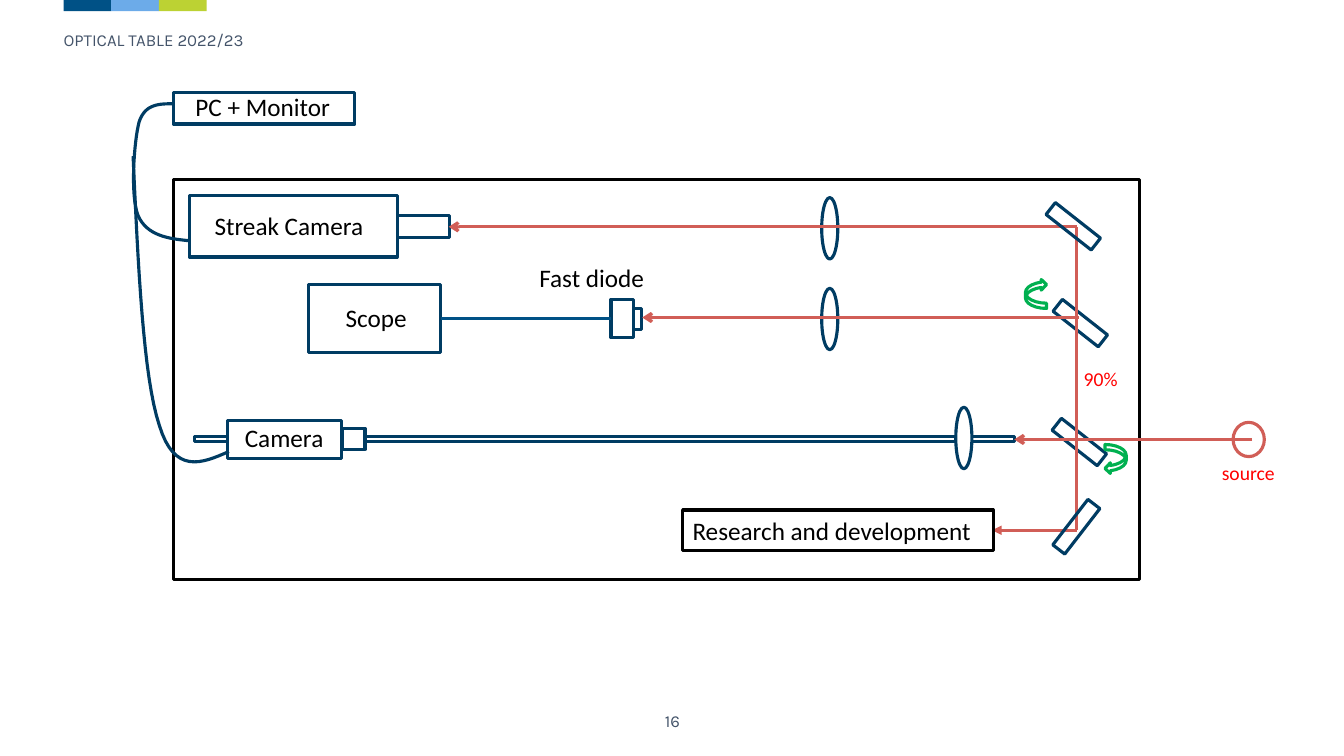
from dataclasses import dataclass

from lxml import etree
from pptx import Presentation
from pptx.dml.color import RGBColor
from pptx.enum import shapes, text
from pptx.oxml import ns
from pptx.util import Inches, Pt


@dataclass(frozen=True)
class Theme:
    navy: str = "003C63"
    blue: str = "005186"
    sky: str = "6CABE9"
    lime: str = "BCD233"
    slate: str = "44546A"
    beam: str = "D15E57"
    red: str = "FF0000"
    green: str = "00B050"
    black: str = "000000"
    white: str = "FFFFFF"
    body_font: str = "Calibri"
    heading_font: str = "Karla"
    label_size: int = 18
    note_size: int = 14
    heading_size: int = 12
    stroke: float = 2.25


THEME = Theme()
KIND = shapes.MSO_SHAPE


def color(value):
    return RGBColor.from_string(value)


def style_line(shape, line_color):
    shape.line.color.rgb = color(line_color)
    shape.line.width = Pt(THEME.stroke)


def write(shape, words, size, font_color, font=THEME.body_font, align=text.PP_ALIGN.LEFT):
    paragraph = shape.text_frame.paragraphs[0]
    paragraph.alignment = align
    run = paragraph.add_run()
    run.text = words
    run.font.name = font
    run.font.size = Pt(size)
    run.font.color.rgb = color(font_color)
    return paragraph


def add_outline(slide, kind, left, top, width, height, line=THEME.navy, fill=None, rotation=0):
    shape = slide.shapes.add_shape(kind, Inches(left), Inches(top), Inches(width), Inches(height))
    shape.shadow.inherit = False
    shape.rotation = rotation
    if fill:
        shape.fill.solid()
        shape.fill.fore_color.rgb = color(fill)
    else:
        shape.fill.background()
    if line:
        style_line(shape, line)
    else:
        shape.line.fill.background()
    return shape


def add_box(slide, *bounds, **style):
    return add_outline(slide, KIND.RECTANGLE, *bounds, **style)


def add_mirror(slide, left, top, rotation=308.2):
    add_box(slide, left, top, 0.15, 0.57, rotation=rotation)


def add_lens(slide, left, top, fill=None):
    add_outline(slide, KIND.OVAL, left, top, 0.16, 0.61, fill=fill)


def add_flip_arrow(slide, left, top, rotation=0):
    add_outline(slide, KIND.CURVED_LEFT_ARROW, left, top, 0.21, 0.29,
                line=THEME.green, rotation=rotation)


def add_line(slide, start, end, line=THEME.beam, head=None):
    connector = slide.shapes.add_connector(
        shapes.MSO_CONNECTOR.STRAIGHT, *(Inches(value) for value in (*start, *end)))
    style_line(connector, line)
    if head:
        outline = connector.line._get_or_add_ln()
        etree.SubElement(outline, ns.qn("a:tailEnd"), type=head)
    etree.SubElement(connector._element.spPr, ns.qn("a:effectLst"))


def curve_points(start, segments, steps=16):
    for first, second, end in segments:
        for step in range(1, steps + 1):
            t = step / steps
            weights = ((1 - t) ** 3, 3 * t * (1 - t) ** 2, 3 * t ** 2 * (1 - t), t ** 3)
            corners = (start, first, second, end)
            yield tuple(Inches(sum(w * corner[axis] for w, corner in zip(weights, corners)))
                        for axis in (0, 1))
        start = end


def add_cable(slide, start, segments):
    builder = slide.shapes.build_freeform(Inches(start[0]), Inches(start[1]))
    builder.add_line_segments(list(curve_points(start, segments)), close=False)
    cable = builder.convert_to_shape()
    cable.shadow.inherit = False
    cable.fill.background()
    style_line(cable, THEME.navy)


def add_label(slide, words, left, top, width, height=0.4,
              size=THEME.label_size, font_color=THEME.black):
    label = slide.shapes.add_textbox(Inches(left), Inches(top), Inches(width), Inches(height))
    label.text_frame.word_wrap = False
    write(label, words, size, font_color)


def add_heading(slide, words):
    title = slide.shapes.title
    title.left, title.top, title.width, title.height = map(Inches, (0.63, 0.32, 1.81, 0.42))
    frame = title.text_frame
    frame.margin_left = frame.margin_right = frame.margin_top = frame.margin_bottom = 0
    frame.vertical_anchor = text.MSO_ANCHOR.TOP
    frame.auto_size = text.MSO_AUTO_SIZE.NONE
    frame.word_wrap = True
    paragraph = write(title, words, THEME.heading_size, THEME.slate, THEME.heading_font)
    paragraph.line_spacing = 0.9


def add_page_furniture(slide):
    for index, fill in enumerate((THEME.blue, THEME.sky, THEME.lime)):
        add_box(slide, 0.63 + index * 0.473, 0, 0.473, 0.11, line=None, fill=fill)
    number = slide.shapes.add_textbox(Inches(6.21), Inches(6.95), Inches(0.92), Inches(0.4))
    number.text_frame.word_wrap = True
    number.text_frame.vertical_anchor = text.MSO_ANCHOR.MIDDLE
    write(number, "16", THEME.heading_size, THEME.slate, THEME.heading_font, text.PP_ALIGN.CENTER)


def add_instruments(slide):
    add_box(slide, 1.72, 1.78, 9.58, 3.97, line=THEME.black)
    add_box(slide, 1.88, 1.94, 2.06, 0.61)
    add_box(slide, 3.94, 2.14, 0.52, 0.22)
    add_box(slide, 6.06, 2.97, 0.22, 0.38)
    add_box(slide, 6.28, 3.06, 0.08, 0.21)
    add_box(slide, 1.93, 4.33, 8.13, 0.05)
    add_box(slide, 2.26, 4.17, 1.13, 0.38, fill=THEME.white)
    add_box(slide, 3.4, 4.25, 0.22, 0.21, fill=THEME.white)
    add_box(slide, 1.72, 0.92, 1.8, 0.31)
    add_box(slide, 3.06, 2.82, 1.31, 0.68)
    add_line(slide, (6.06, 3.16), (4.37, 3.16), line=THEME.blue)
    add_cable(slide, (1.89, 2.39), [
        ((1.67, 2.37), (1.46, 2.34), (1.37, 2.14)),
        ((1.29, 1.94), (1.33, 1.4), (1.38, 1.21)),
        ((1.44, 1.03), (1.58, 1.03), (1.72, 1.03))])
    add_cable(slide, (2.27, 4.48), [
        ((2, 4.6), (1.73, 4.71), (1.58, 4.22)),
        ((1.42, 3.74), (1.37, 2.64), (1.32, 1.55))])


def add_optics(slide):
    add_lens(slide, 8.15, 1.96)
    add_lens(slide, 8.15, 2.86)
    add_lens(slide, 9.48, 4.04, fill=THEME.white)
    add_mirror(slide, 10.63, 4.1)
    add_mirror(slide, 10.64, 2.92)
    add_line(slide, (12.42, 4.36), (10.06, 4.36), head="arrow")
    add_line(slide, (10.68, 5.26), (10.68, 2.25))
    add_line(slide, (10.7, 3.15), (6.37, 3.15), head="arrow")
    add_line(slide, (10.68, 2.25), (4.45, 2.25), head="arrow")
    add_line(slide, (10.68, 5.26), (9.84, 5.26), head="triangle")
    add_mirror(slide, 10.57, 1.96)
    add_mirror(slide, 10.6, 4.94, rotation=217.7)
    add_outline(slide, KIND.OVAL, 12.23, 4.19, 0.31, 0.34, line=THEME.beam)
    add_flip_arrow(slide, 10.96, 4.41)
    add_flip_arrow(slide, 10.17, 2.77, rotation=180)


def add_labels(slide):
    add_label(slide, "PC + Monitor", 1.84, 0.86, 1.55)
    add_label(slide, "Streak Camera", 2.03, 2.04, 1.69)
    add_label(slide, "Fast diode", 5.25, 2.55, 1.25)
    add_label(slide, "Camera", 2.33, 4.14, 0.99)
    add_label(slide, "Scope", 3.33, 2.95, 0.82)
    add_label(slide, "90%", 10.65, 3.59, 0.54, 0.34, THEME.note_size, THEME.red)
    add_label(slide, "source", 12.02, 4.52, 0.73, 0.34, THEME.note_size, THEME.red)
    research = add_box(slide, 6.77, 5.06, 3.08, 0.4, line=THEME.black)
    research.text_frame.word_wrap = False
    research.text_frame.vertical_anchor = text.MSO_ANCHOR.TOP
    write(research, "Research and development", THEME.label_size, THEME.black)


def main():
    presentation = Presentation()
    presentation.slide_width = Inches(13.33)
    presentation.slide_height = Inches(7.5)
    slide = presentation.slides.add_slide(presentation.slide_layouts.get_by_name("Title Only"))
    add_page_furniture(slide)
    add_heading(slide, "OPTICAL TABLE 2022/23")
    add_instruments(slide)
    add_optics(slide)
    add_labels(slide)
    presentation.save("out.pptx")


if __name__ == "__main__":
    main()
